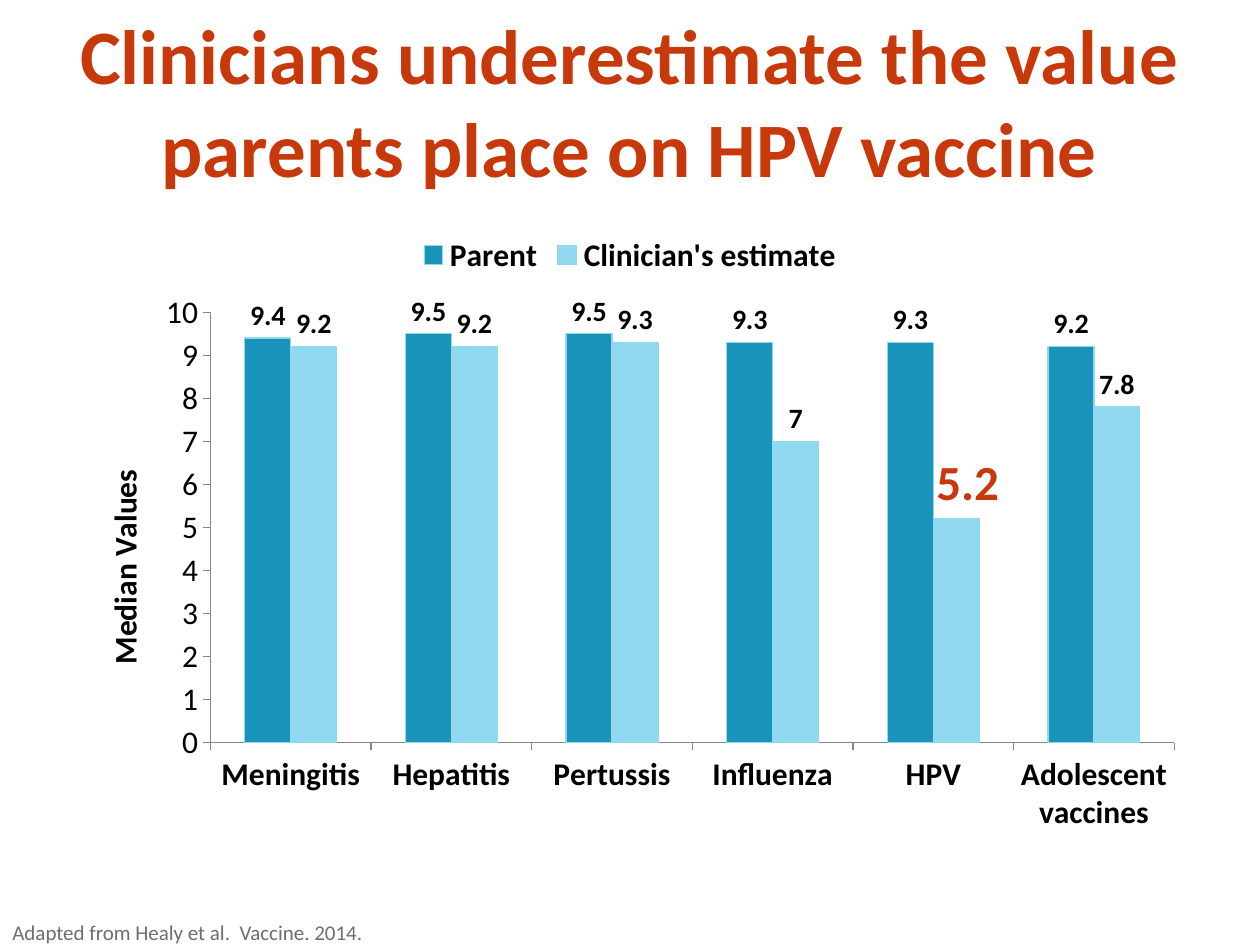
from dataclasses import dataclass

from lxml import etree
from pptx import Presentation
from pptx import util as u
from pptx.chart import data as chart_data
from pptx.dml import color
from pptx.enum import chart as charts, text
from pptx.oxml import ns


@dataclass(frozen=True)
class Theme:
    font: str = "Calibri"
    accent: str = "C7380B"
    ink: str = "000000"
    muted: str = "6E6E6E"
    axis: str = "868686"
    parent: str = "1993B9"
    clinician: str = "90D9F0"
    title_size: int = 44
    chart_size: int = 18
    label_size: int = 16
    callout_size: int = 28
    note_size: int = 12


THEME = Theme()
CATEGORIES = ["Meningitis", "Hepatitis", "Pertussis", "Influenza", "HPV", "Adolescent vaccines"]
SERIES = {
    "Parent": ([9.4, 9.5, 9.5, 9.3, 9.3, 9.2], THEME.parent),
    "Clinician's estimate": ([9.2, 9.2, 9.3, 7, 5.2, 7.8], THEME.clinician),
}


def apply(target, values):
    for name, value in values.items():
        setattr(target, name, value)


def style_font(font, size, ink, bold=False):
    apply(font, {"name": THEME.font, "size": u.Pt(size), "bold": bold})
    font.color.rgb = color.RGBColor.from_string(ink)


def style_line(line, ink):
    line.color.rgb = color.RGBColor.from_string(ink)
    line.width = u.Pt(0.75)


def place(shape, box):
    apply(shape, dict(zip(("left", "top", "width", "height"), box)))


def set_layout(parent, after, **values):
    for old in parent.findall(ns.qn("c:layout")):
        parent.remove(old)
    layout = etree.Element(ns.qn("c:layout"))
    manual = etree.SubElement(layout, ns.qn("c:manualLayout"))
    for name, value in values.items():
        etree.SubElement(manual, ns.qn(f"c:{name}")).set("val", str(value))
    previous = parent.find(ns.qn(after)) if after else None
    if previous is None:
        parent.insert(0, layout)
    else:
        previous.addnext(layout)


def add_title(page, box):
    title = page.shapes.title
    place(title, box)
    frame = title.text_frame
    apply(frame, {"word_wrap": True, "vertical_anchor": text.MSO_ANCHOR.MIDDLE,
                  "auto_size": text.MSO_AUTO_SIZE.NONE})
    para = frame.paragraphs[0]
    para.alignment = text.PP_ALIGN.CENTER
    span = para.add_run()
    span.text = "Clinicians underestimate the value parents place on HPV vaccine"
    style_font(span.font, THEME.title_size, THEME.accent, True)


def format_axes(chart):
    for axis, bold in ((chart.category_axis, True), (chart.value_axis, False)):
        apply(axis, {"has_major_gridlines": False,
                     "major_tick_mark": charts.XL_TICK_MARK.OUTSIDE,
                     "minor_tick_mark": charts.XL_TICK_MARK.NONE})
        style_font(axis.tick_labels.font, THEME.chart_size, THEME.ink, bold)
        style_line(axis.format.line, THEME.axis)
    values = chart.value_axis
    apply(values, {"minimum_scale": 0, "maximum_scale": 10, "major_unit": 1})
    values.tick_labels.number_format = "General"
    values.tick_labels.number_format_is_linked = False
    span = values.axis_title.text_frame.paragraphs[0].add_run()
    span.text = "Median Values"
    style_font(span.font, THEME.chart_size, THEME.ink, True)
    set_layout(values.axis_title._element, "c:tx", xMode="edge", yMode="edge", x=0.03, y=0.39)


def format_series(series, fill):
    series.format.fill.solid()
    series.format.fill.fore_color.rgb = color.RGBColor.from_string(fill)
    style_line(series.format.line, THEME.clinician)
    labels = series.data_labels
    apply(labels, {"show_value": True, "position": charts.XL_LABEL_POSITION.OUTSIDE_END})
    style_font(labels.font, THEME.label_size, THEME.ink, True)


def highlight_hpv(series):
    index = CATEGORIES.index("HPV")
    label = series.points[index].data_label
    style_font(label.font, THEME.callout_size, THEME.accent, True)
    label.position = charts.XL_LABEL_POSITION.OUTSIDE_END
    element = series.data_labels._element.find(ns.qn("c:dLbl"))
    set_layout(element, "c:idx", x=0.01, y=0)


def add_value_chart(page, box):
    source = chart_data.CategoryChartData()
    source.categories = CATEGORIES
    for name, (values, _) in SERIES.items():
        source.add_series(name, values)
    kind = charts.XL_CHART_TYPE.COLUMN_CLUSTERED
    chart = page.shapes.add_chart(kind, *box, source).chart
    style_font(chart.font, THEME.chart_size, THEME.ink)
    apply(chart, {"has_title": False, "has_legend": True})
    apply(chart.legend, {"position": charts.XL_LEGEND_POSITION.TOP, "include_in_layout": False})
    style_font(chart.legend.font, THEME.chart_size, THEME.ink, True)
    plot = chart.plots[0]
    apply(plot, {"gap_width": 150, "overlap": 0, "vary_by_categories": False})
    format_axes(chart)
    for series in plot.series:
        format_series(series, SERIES[series.name][1])
    highlight_hpv(plot.series[1])
    area = chart._chartSpace.find(".//" + ns.qn("c:plotArea"))
    set_layout(area, None, layoutTarget="inner", xMode="edge", yMode="edge",
               x=0.13, y=0.147, w=0.85, h=0.69)


def add_source_note(page, box):
    frame = page.shapes.add_textbox(*box).text_frame
    frame.word_wrap = True
    span = frame.paragraphs[0].add_run()
    span.text = "Adapted from Healy et al.  Vaccine. 2014."
    style_font(span.font, THEME.note_size, THEME.muted)


def main():
    deck = Presentation()
    apply(deck, {"slide_width": u.Cm(25.4), "slide_height": u.Cm(19.05)})
    page = deck.slides.add_slide(deck.slide_layouts[5])
    margin, width = u.Cm(1.27), u.Cm(22.86)
    add_title(page, (margin, u.Cm(0.43), width, u.Cm(3.18)))
    add_value_chart(page, (margin, u.Cm(4.45), width, u.Cm(12.57)))
    add_source_note(page, (0, u.Cm(18.42), width, u.Cm(0.63)))
    deck.save("out.pptx")


if __name__ == "__main__":
    main()
